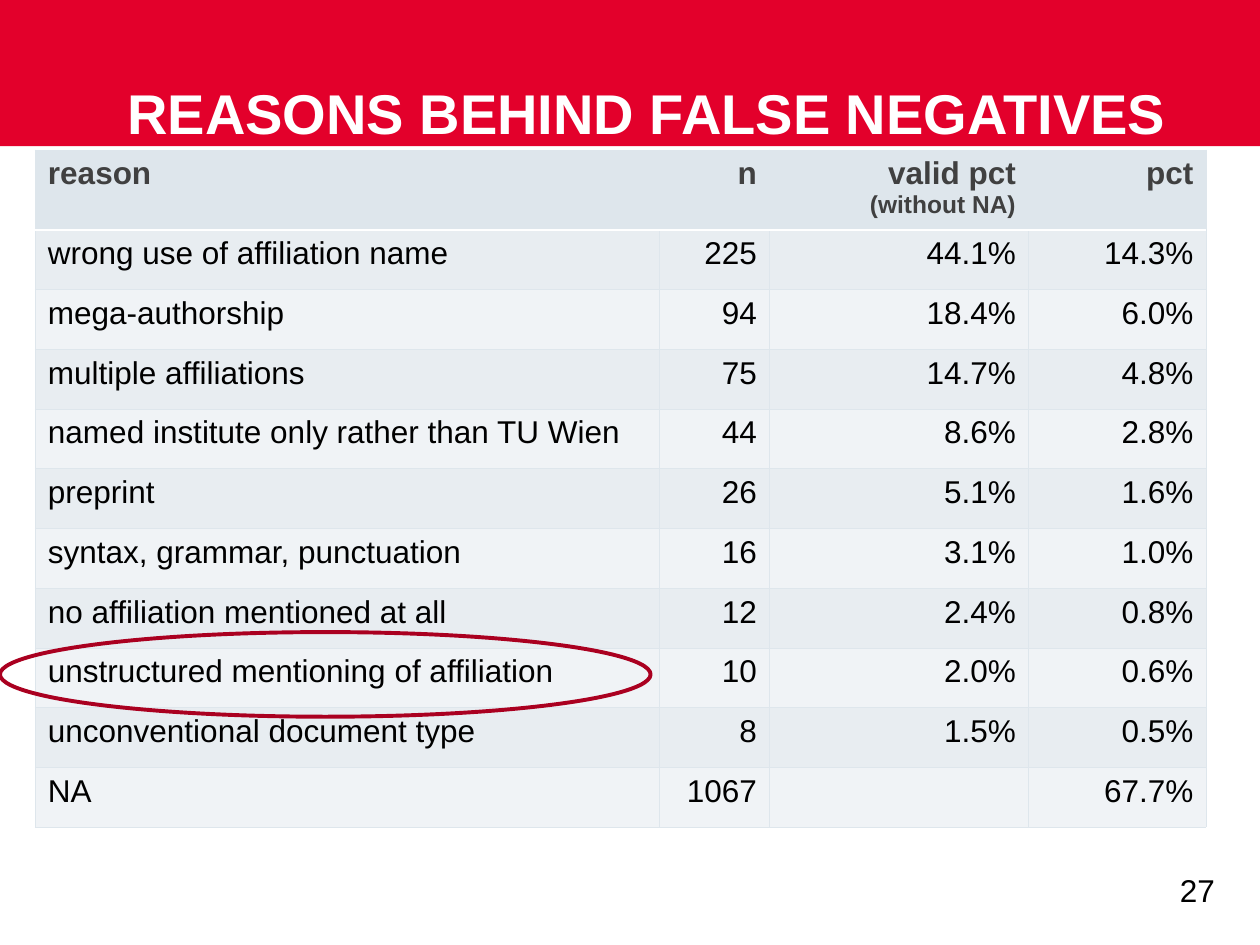
from lxml import etree
from pptx import Presentation
from pptx.dml.color import RGBColor
from pptx.enum import shapes, text
from pptx.oxml import ns
from pptx.util import Pt

# Content
TITLE = "REASONS BEHIND FALSE NEGATIVES"
PAGE_NUMBER = "27"
HEADER = ("reason", "n", "valid pct\n(without NA)", "pct")
REASONS = [
    ("wrong use of affiliation name", "225", "44.1%", "14.3%"),
    ("mega-authorship", "94", "18.4%", "6.0%"),
    ("multiple affiliations", "75", "14.7%", "4.8%"),
    ("named institute only rather than TU Wien", "44", "8.6%", "2.8%"),
    ("preprint", "26", "5.1%", "1.6%"),
    ("syntax, grammar, punctuation", "16", "3.1%", "1.0%"),
    ("no affiliation mentioned at all", "12", "2.4%", "0.8%"),
    ("unstructured mentioning of affiliation", "10", "2.0%", "0.6%"),
    ("unconventional document type", "8", "1.5%", "0.5%"),
    ("NA", "1067", "", "67.7%"),
]
COLUMN_WIDTHS = (356.5, 63, 148, 101.5)
HEADER_HEIGHT, ROW_HEIGHT = 44.6, 34.15

# Style
FONT = "Arial"
RED = RGBColor(0xE3, 0x00, 0x2B)
DARK_RED = RGBColor(0xAA, 0x00, 0x20)
WHITE = RGBColor(0xFF, 0xFF, 0xFF)
BLACK = RGBColor(0x00, 0x00, 0x00)
DARK_GREY = RGBColor(0x40, 0x40, 0x40)
HEADER_FILL = RGBColor(0xDE, 0xE6, 0xEC)
BAND_FILLS = (RGBColor(0xE8, 0xED, 0xF1), RGBColor(0xF0, 0xF3, 0xF6))


def format_runs(para, size, color, bold=False):
    for span in para.runs:
        span.font.name = FONT
        span.font.size = Pt(size)
        span.font.bold = bold
        span.font.color.rgb = color


def add_border(cell, side, color, width):
    properties = cell._tc.get_or_add_tcPr()
    line = etree.SubElement(properties, ns.qn(f"a:ln{side}"), w=str(Pt(width)))
    fill = etree.SubElement(line, ns.qn("a:solidFill"))
    etree.SubElement(fill, ns.qn("a:srgbClr"), val=str(color))


deck = Presentation()
deck.slide_width, deck.slide_height = Pt(720), Pt(540)
page = deck.slides.add_slide(deck.slide_layouts[5])

# Title on a red band
title = page.shapes.title
band = page.shapes.add_shape(shapes.MSO_SHAPE.RECTANGLE, 0, 0, Pt(720), Pt(83.5))
band.shadow.inherit = False
band.fill.solid()
band.fill.fore_color.rgb = RED
band.line.fill.background()
title.element.addprevious(band.element)

title.left, title.top, title.width, title.height = Pt(72.7), Pt(19.5), Pt(628.5), Pt(64)
frame = title.text_frame
frame.text = TITLE
frame.word_wrap = True
frame.auto_size = text.MSO_AUTO_SIZE.NONE
frame.vertical_anchor = text.MSO_ANCHOR.BOTTOM
frame.margin_left = frame.margin_top = frame.margin_right = frame.margin_bottom = 0
para = frame.paragraphs[0]
para.alignment = text.PP_ALIGN.LEFT
para.line_spacing = Pt(32)
format_runs(para, 32, WHITE, True)

# Page number
box = page.shapes.add_textbox(Pt(617.8), Pt(494), Pt(83.5), Pt(46))
box.text_frame.word_wrap = True
box.text_frame.text = PAGE_NUMBER
para = box.text_frame.paragraphs[0]
para.alignment = text.PP_ALIGN.RIGHT
format_runs(para, 18, BLACK)

# Table of reasons
rows = [HEADER] + REASONS
table = page.shapes.add_table(
    len(rows), len(HEADER), Pt(20.2), Pt(85.7), Pt(sum(COLUMN_WIDTHS)),
    Pt(HEADER_HEIGHT + ROW_HEIGHT * len(REASONS))).table
for column, width in zip(table.columns, COLUMN_WIDTHS):
    column.width = Pt(width)

for r, values in enumerate(rows):
    is_header = r == 0
    table.rows[r].height = Pt(HEADER_HEIGHT if is_header else ROW_HEIGHT)
    for c, value in enumerate(values):
        cell = table.cell(r, c)
        for side in "LRTB":
            under_header = (r, side) in ((0, "B"), (1, "T"))
            add_border(cell, side, *((WHITE, 1) if under_header else (HEADER_FILL, 0.5)))
        cell.fill.solid()
        cell.fill.fore_color.rgb = HEADER_FILL if is_header else BAND_FILLS[(r - 1) % 2]
        cell.text_frame.text = value
        for line_number, para in enumerate(cell.text_frame.paragraphs):
            para.alignment = text.PP_ALIGN.RIGHT if c else text.PP_ALIGN.LEFT
            format_runs(para, 14 if line_number else 18,
                        DARK_GREY if is_header else BLACK, is_header)

# Ellipse around the highlighted reason
ellipse = page.shapes.add_shape(
    shapes.MSO_SHAPE.OVAL, 0, Pt(361.2), Pt(371.8), Pt(48.4))
ellipse.shadow.inherit = False
ellipse.fill.background()
ellipse.line.color.rgb = DARK_RED
ellipse.line.width = Pt(2.25)

deck.save("out.pptx")
